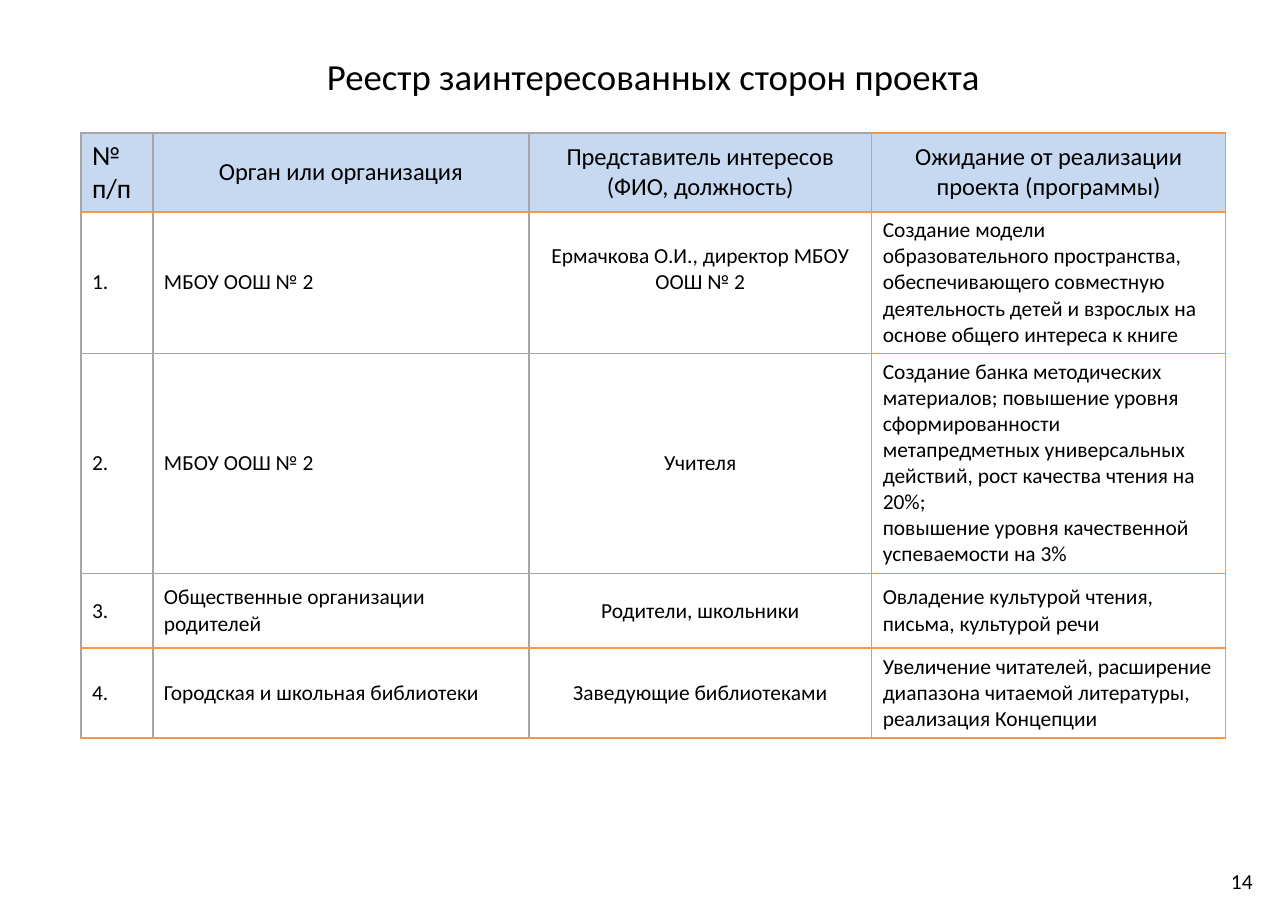
from lxml.etree import SubElement
from pptx import Presentation
from pptx.dml.color import RGBColor
from pptx.enum.text import MSO_ANCHOR, PP_ALIGN
from pptx.oxml.ns import qn
from pptx.util import Inches, Pt

TITLE = "Реестр заинтересованных сторон проекта"
PAGE = "14"
HEADER = ["№\nп/п", "Орган или организация",
          "Представитель интересов\v(ФИО, должность)",
          "Ожидание от реализации проекта (программы)"]
PARTIES = [
    ("МБОУ ООШ № 2", "Ермачкова О.И., директор МБОУ ООШ № 2",
     "Создание модели образовательного пространства, обеспечивающего "
     "совместную деятельность детей и взрослых на основе общего интереса к книге"),
    ("МБОУ ООШ № 2", "Учителя",
     "Создание банка методических материалов; повышение уровня "
     "сформированности метапредметных универсальных действий, "
     "рост качества чтения на 20%;\n"
     "повышение уровня качественной успеваемости на 3%"),
    ("Общественные организации родителей", "Родители, школьники",
     "Овладение культурой чтения, письма, культурой речи"),
    ("Городская и школьная библиотеки", "Заведующие библиотеками",
     "Увеличение читателей, расширение диапазона читаемой литературы, "
     "реализация Концепции"),
]
COLORS = {"text": "000000", "header": "C6D9F1", "accent": "F79646", "grid": "A6A6A6"}
FONT = "Calibri"
COL_WIDTHS = [72, 376, 343, 354]
ROW_HEIGHTS = [79, 141, 220, 75, 90]
LEFT, TOP = 81, 133
PX = 914400 / 110.2


def px(n):
    return round(n * PX)


def write(tf, text, size, align):
    tf.text = text
    for p in tf.paragraphs:
        p.alignment = align
        for r in p.runs:
            r.font.name = FONT
            r.font.size = Pt(size)
            r.font.color.rgb = RGBColor.from_string(COLORS["text"])


def frame(tf, text, size, align):
    """Fill a title or text box that stands outside the table."""
    tf.word_wrap = True
    tf.vertical_anchor = MSO_ANCHOR.MIDDLE
    tf.margin_left = tf.margin_right = px(12)
    tf.margin_top = tf.margin_bottom = px(6)
    write(tf, text, size, align)


def border(cell, side, color, width):
    tcPr = cell._tc.get_or_add_tcPr()
    ln = SubElement(tcPr, qn(f"a:ln{side}"), w=str(Pt(width)))
    fill = SubElement(ln, qn("a:solidFill"))
    SubElement(fill, qn("a:srgbClr"), val=COLORS[color])


def row_line(line, col):
    """Colour and width of a horizontal line; line 0 is the table's top."""
    if line in (1, len(ROW_HEIGHTS)):
        return "accent", 1.5
    if line == len(ROW_HEIGHTS) - 1 or col == 3:
        return "accent", 1
    return "grid", 1


def column_line(line):
    return ("accent" if line >= 3 else "grid"), 1


def add_register(s):
    rows = [HEADER] + [(f"{i}.", *party) for i, party in enumerate(PARTIES, 1)]
    table = s.shapes.add_table(len(rows), len(HEADER), px(LEFT), px(TOP),
                               px(sum(COL_WIDTHS)), px(sum(ROW_HEIGHTS))).table
    table.first_row = table.horz_banding = False
    for column, width in zip(table.columns, COL_WIDTHS):
        column.width = px(width)
    for row, height in zip(table.rows, ROW_HEIGHTS):
        row.height = px(height)
    for i, row in enumerate(rows):
        for j, text in enumerate(row):
            cell = table.cell(i, j)
            cell.vertical_anchor = MSO_ANCHOR.MIDDLE
            centred = j == 2 or (i == 0 and j > 0)
            size = 14 if i else 16 if j else 18
            write(cell.text_frame, text, size,
                  PP_ALIGN.CENTER if centred else PP_ALIGN.LEFT)
            border(cell, "L", *column_line(j))
            border(cell, "R", *column_line(j + 1))
            border(cell, "T", *row_line(i, j))
            border(cell, "B", *row_line(i + 1, j))
            if i == 0:
                cell.fill.solid()
                cell.fill.fore_color.rgb = RGBColor.from_string(COLORS["header"])
            else:
                cell.fill.background()
    # The director's name sits one line above the row's middle
    table.cell(1, 2).margin_bottom = px(32)


def main():
    prs = Presentation()
    prs.slide_width, prs.slide_height = Inches(11.69), Inches(8.27)
    s = prs.slides.add_slide(prs.slide_layouts[5])

    title = s.shapes.title
    title.left, title.top = px(LEFT), px(36)
    title.width, title.height = px(sum(COL_WIDTHS)), px(87)
    frame(title.text_frame, TITLE, 24, PP_ALIGN.CENTER)
    title.text_frame.paragraphs[0].line_spacing = 0.85

    add_register(s)

    number = s.shapes.add_textbox(px(964), px(857), px(301), px(49))
    frame(number.text_frame, PAGE, 14, PP_ALIGN.RIGHT)
    prs.save("out.pptx")


if __name__ == "__main__":
    main()
